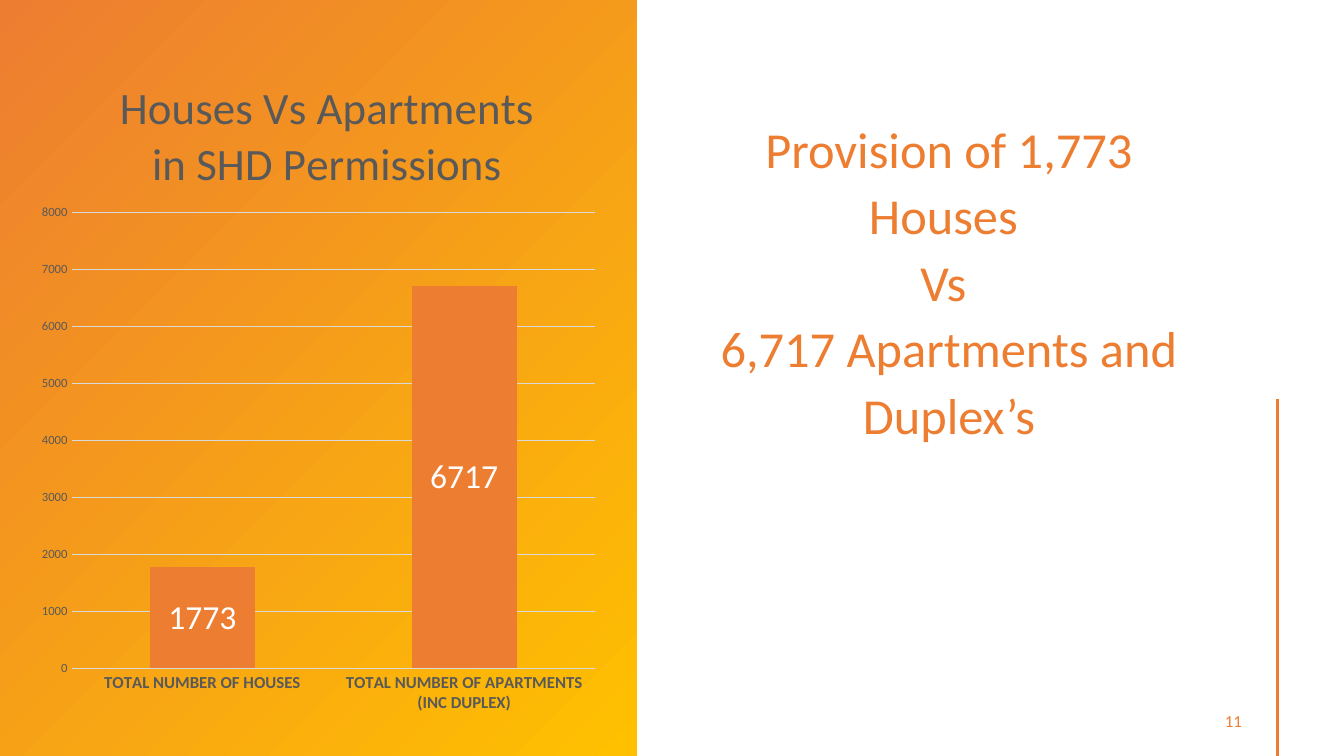
from pptx import Presentation
from pptx.chart.data import CategoryChartData
from pptx.dml.color import RGBColor
from pptx.enum.chart import XL_CHART_TYPE as ChartType, XL_LABEL_POSITION as LabelPos, XL_TICK_MARK as Tick
from pptx.enum.shapes import MSO_CONNECTOR as Connector, MSO_SHAPE as Preset
from pptx.enum.text import MSO_ANCHOR as Anchor, PP_ALIGN as Align
from pptx.oxml import parse_xml
from pptx.oxml.ns import nsdecls, qn
from pptx.util import Pt

ORANGE, GOLD, WHITE = "ED7D31", "FFC000", "FFFFFF"
GREY, RULE_GREY = "595959", "D9D9D9"
FONT = "Calibri"
PERMISSIONS = {
    "TOTAL NUMBER OF HOUSES": 1773,
    "TOTAL NUMBER OF APARTMENTS (INC DUPLEX)": 6717,
}


def rgb(value):
    """Turn a hex string into a colour."""
    return RGBColor.from_string(value)


def box(left, top, width, height):
    """Convert a frame in points to lengths."""
    return [Pt(v) for v in (left, top, width, height)]


def apply(target, formats):
    """Set each named attribute on the target."""
    for name, value in formats.items():
        setattr(target, name, value)


def style_font(font, size, color, bold=False):
    """Give a font its face, size, weight and colour."""
    apply(font, {"name": FONT, "size": Pt(size), "bold": bold})
    font.color.rgb = rgb(color)


def style_line(line, color, width):
    """Give a line its colour and width."""
    line.color.rgb = rgb(color)
    line.width = Pt(width)


def add_panel(slide, frame, start, end):
    """Add a rectangle with a diagonal gradient."""
    panel = slide.shapes.add_shape(Preset.RECTANGLE, *box(*frame))
    panel.shadow.inherit = False
    panel.line.fill.background()
    panel.fill.gradient()
    panel.fill.gradient_angle = 315
    for stop, color in zip(panel.fill.gradient_stops, (start, end)):
        stop.color.rgb = rgb(color)


def add_rule(slide, x, top, bottom):
    """Add a vertical accent line."""
    rule = slide.shapes.add_connector(Connector.STRAIGHT, Pt(x), Pt(top), Pt(x), Pt(bottom))
    style_line(rule.line, ORANGE, 2)
    rule._element.spPr.append(parse_xml(f"<a:effectLst {nsdecls('a')}/>"))


def add_text(slide, frame, words, size, anchor, paragraph_formats):
    """Add a wrapped orange text box."""
    text = slide.shapes.add_textbox(*box(*frame)).text_frame
    apply(text, {"word_wrap": True, "vertical_anchor": anchor, "text": words})
    paragraph = text.paragraphs[0]
    apply(paragraph, paragraph_formats)
    for run in paragraph.runs:
        style_font(run.font, size, ORANGE)


def place(part, index, target="", **fractions):
    """Fix the place of a chart part in fractions of the chart."""
    for layout in part.findall(qn("c:layout")):
        part.remove(layout)
    modes = "".join(f'<c:{axis}Mode val="edge"/>' for axis in "xy")
    values = "".join(f'<c:{name} val="{value}"/>' for name, value in fractions.items())
    part.insert(index, parse_xml(
        f"<c:layout {nsdecls('c')}><c:manualLayout>{target}{modes}{values}"
        "</c:manualLayout></c:layout>"))


def style_axis(axis, size, bold):
    """Remove tick marks from an axis and style its labels."""
    apply(axis, {"major_tick_mark": Tick.NONE, "minor_tick_mark": Tick.NONE})
    style_font(axis.tick_labels.font, size, GREY, bold)


def add_permissions_chart(slide, frame, heading, values):
    """Add the column chart of permissions."""
    data = CategoryChartData()
    data.categories = list(values)
    data.add_series("Series 1", list(values.values()))
    chart = slide.shapes.add_chart(ChartType.COLUMN_STACKED, *box(*frame), data).chart
    apply(chart, {"has_legend": False, "has_title": True})
    style_font(chart.font, 10, GREY)

    title = chart.chart_title.text_frame
    title.text = heading
    style_font(title.paragraphs[0].runs[0].font, 32, GREY)

    style_axis(chart.category_axis, 12, True)
    style_line(chart.category_axis.format.line, RULE_GREY, 0.75)
    scale = chart.value_axis
    style_axis(scale, 9, False)
    apply(scale, {"minimum_scale": 0, "maximum_scale": 8000, "major_unit": 1000})
    scale.format.line.fill.background()
    style_line(scale.major_gridlines.format.line, RULE_GREY, 0.75)

    plot = chart.plots[0]
    apply(plot, {"gap_width": 150, "overlap": 100, "vary_by_categories": False})
    columns = plot.series[0]
    columns.format.fill.solid()
    columns.format.fill.fore_color.rgb = rgb(ORANGE)
    labels = columns.data_labels
    apply(labels, {"show_value": True, "position": LabelPos.CENTER})
    style_font(labels.font, 24, WHITE)

    space = chart._chartSpace
    place(space.find(".//" + qn("c:title")), 1, x=0.14, y=0.05)
    place(space.find(".//" + qn("c:plotArea")), 0, '<c:layoutTarget val="inner"/>',
          x=0.07, y=0.26, w=0.91, h=0.66)


def main():
    """Build the slide and save it."""
    deck = Presentation()
    apply(deck, {"slide_width": Pt(960), "slide_height": Pt(540)})
    slide = deck.slides.add_slide(deck.slide_layouts[6])
    add_rule(slide, 912.24, 285, 540)
    add_panel(slide, (0, 0, 455, 540), ORANGE, GOLD)
    add_text(slide, (503.3, 66.2, 349.2, 254.9),
             "Provision of 1,773 Houses \vVs \v6,717 Apartments and Duplex’s", 36, Anchor.BOTTOM,
             {"alignment": Align.CENTER, "line_spacing": 1.1, "space_before": Pt(10)})
    add_text(slide, (678.2, 500.4, 216, 28.8), "11", 12, Anchor.MIDDLE, {"alignment": Align.RIGHT})
    add_permissions_chart(slide, (22.3, 23.8, 411.1, 493.2),
                          "Houses Vs Apartments in SHD Permissions", PERMISSIONS)
    deck.save("out.pptx")


if __name__ == "__main__":
    main()
